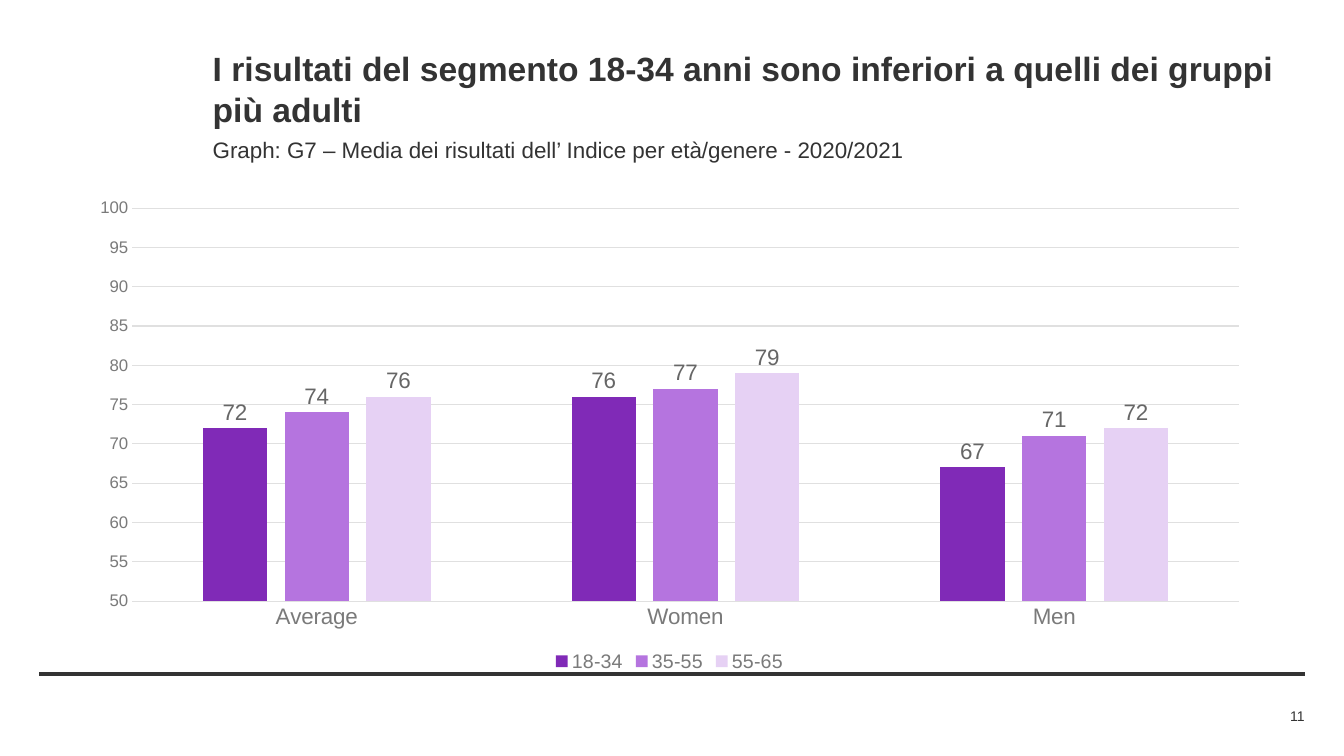
import pptx
import pptx.chart.data
import pptx.dml.color
import pptx.enum.chart
import pptx.enum.shapes
import pptx.enum.text
import pptx.oxml.ns
import pptx.util
from lxml import etree

RGBColor = pptx.dml.color.RGBColor
INK = RGBColor(0x33, 0x33, 0x33)
AXIS_GREY = RGBColor(0x7A, 0x7A, 0x7A)
LABEL_GREY = RGBColor(0x66, 0x66, 0x66)
GRID_GREY = RGBColor(0xE0, 0xE0, 0xE0)
WHITE = RGBColor(0xFF, 0xFF, 0xFF)
DARK_PURPLE = RGBColor(0x80, 0x2A, 0xB7)
MID_PURPLE = RGBColor(0xB5, 0x74, 0xDF)
PALE_PURPLE = RGBColor(0xE6, 0xD1, 0xF4)

FONT = "Arial"
SLIDE_WIDTH, SLIDE_HEIGHT = 13.33, 7.5
LEFT_MARGIN, TEXT_LEFT, RIGHT_EDGE = 0.39, 2.11, 12.94
TEXT_WIDTH = RIGHT_EDGE - TEXT_LEFT

GENDERS = ["Average", "Women", "Men"]
AGE_GROUPS = [
    ("18-34", [72, 76, 67], DARK_PURPLE),
    ("35-55", [74, 77, 71], MID_PURPLE),
    ("55-65", [76, 79, 72], PALE_PURPLE),
]


def style_font(font, size, color, bold=False):
    """Apply the slide's typeface with a size and colour."""
    font.name = FONT
    font.size = pptx.util.Pt(size)
    font.color.rgb = color
    font.bold = bold


def place(shape, box):
    """Move a shape to a box of left, top, width and height in inches."""
    shape.left, shape.top, shape.width, shape.height = map(pptx.util.Inches, box)


def write_text(shape, text, size, bold=False,
               align=pptx.enum.text.PP_ALIGN.LEFT,
               anchor=pptx.enum.text.MSO_ANCHOR.TOP):
    """Fill a shape with one paragraph and no inner margins."""
    frame = shape.text_frame
    frame.text = text
    frame.word_wrap = True
    frame.auto_size = pptx.enum.text.MSO_AUTO_SIZE.NONE
    frame.vertical_anchor = anchor
    frame.margin_left = frame.margin_right = 0
    frame.margin_top = frame.margin_bottom = 0
    paragraph = frame.paragraphs[0]
    paragraph.alignment = align
    style_font(paragraph.font, size, INK, bold)


def add_heading(slide, box):
    """Place the title and, below its two lines, the chart caption."""
    left, top, width, height = box
    place(slide.shapes.title, (left, top, width, height * 0.65))
    write_text(slide.shapes.title,
               "I risultati del segmento 18-34 anni sono inferiori a quelli dei gruppi più adulti",
               24, bold=True)
    caption_top = top + height * 0.67
    caption = slide.shapes.add_textbox(
        *map(pptx.util.Inches, (left, caption_top, width, height * 0.33)))
    write_text(caption,
               "Graph: G7 – Media dei risultati dell’ Indice per età/genere - 2020/2021", 16)


def add_footer(slide, box):
    """Draw the rule along the top of the footer and the page number in its corner."""
    left, top, width, height = box
    rule = slide.shapes.add_connector(
        pptx.enum.shapes.MSO_CONNECTOR.STRAIGHT,
        *map(pptx.util.Inches, (left, top, left + width, top)))
    rule.line.color.rgb = INK
    rule.line.width = pptx.util.Pt(3)
    etree.SubElement(rule._element.spPr, pptx.oxml.ns.qn("a:effectLst"))

    number_width, number_height = 1.06, 0.22
    page_number = slide.shapes.add_textbox(*map(pptx.util.Inches, (
        left + width - number_width, top + height - number_height,
        number_width, number_height)))
    write_text(page_number, "11", 10, align=pptx.enum.text.PP_ALIGN.RIGHT,
               anchor=pptx.enum.text.MSO_ANCHOR.MIDDLE)


def style_axes(chart):
    """Format the gender axis, the score axis and its gridlines."""
    gender_axis, score_axis = chart.category_axis, chart.value_axis
    for axis, size in ((gender_axis, 16), (score_axis, 12)):
        axis.major_tick_mark = pptx.enum.chart.XL_TICK_MARK.NONE
        axis.minor_tick_mark = pptx.enum.chart.XL_TICK_MARK.NONE
        style_font(axis.tick_labels.font, size, AXIS_GREY)
    score_axis.minimum_scale, score_axis.maximum_scale = 50, 100
    score_axis.major_unit = 5
    score_axis.format.line.fill.background()
    score_axis.has_major_gridlines = True
    for line in (gender_axis.format.line, score_axis.major_gridlines.format.line):
        line.color.rgb = GRID_GREY
        line.width = pptx.util.Pt(0.75)


def add_score_chart(slide, box):
    """Add the clustered columns of scores by gender and age group."""
    scores = pptx.chart.data.CategoryChartData(number_format="0")
    scores.categories = GENDERS
    for age_group, values, _ in AGE_GROUPS:
        scores.add_series(age_group, values)
    chart = slide.shapes.add_chart(
        pptx.enum.chart.XL_CHART_TYPE.COLUMN_CLUSTERED,
        *map(pptx.util.Inches, box), scores).chart
    style_font(chart.font, 10, INK)
    chart.has_title = False
    style_axes(chart)

    chart.has_legend = True
    chart.legend.position = pptx.enum.chart.XL_LEGEND_POSITION.BOTTOM
    chart.legend.include_in_layout = False
    style_font(chart.legend.font, 14, AXIS_GREY)

    plot = chart.plots[0]
    plot.gap_width, plot.overlap = 219, -27
    plot.vary_by_categories = False
    for series, (_, _, color) in zip(plot.series, AGE_GROUPS):
        series.format.fill.solid()
        series.format.fill.fore_color.rgb = color
        series.invert_if_negative = False
        labels = series.data_labels
        labels.show_value = True
        labels.position = pptx.enum.chart.XL_LABEL_POSITION.OUTSIDE_END
        style_font(labels.font, 16, LABEL_GREY)


def main():
    """Build the slide and save it."""
    presentation = pptx.Presentation()
    presentation.slide_width = pptx.util.Inches(SLIDE_WIDTH)
    presentation.slide_height = pptx.util.Inches(SLIDE_HEIGHT)
    slide = presentation.slides.add_slide(presentation.slide_layouts[5])
    slide.background.fill.solid()
    slide.background.fill.fore_color.rgb = WHITE
    add_footer(slide, (LEFT_MARGIN, 6.69, RIGHT_EDGE - LEFT_MARGIN, 0.52))
    add_heading(slide, (TEXT_LEFT, 0.48, TEXT_WIDTH, 1.3))
    add_score_chart(slide, (0.76, 1.88, 11.76, 4.83))
    presentation.save("out.pptx")


if __name__ == "__main__":
    main()
